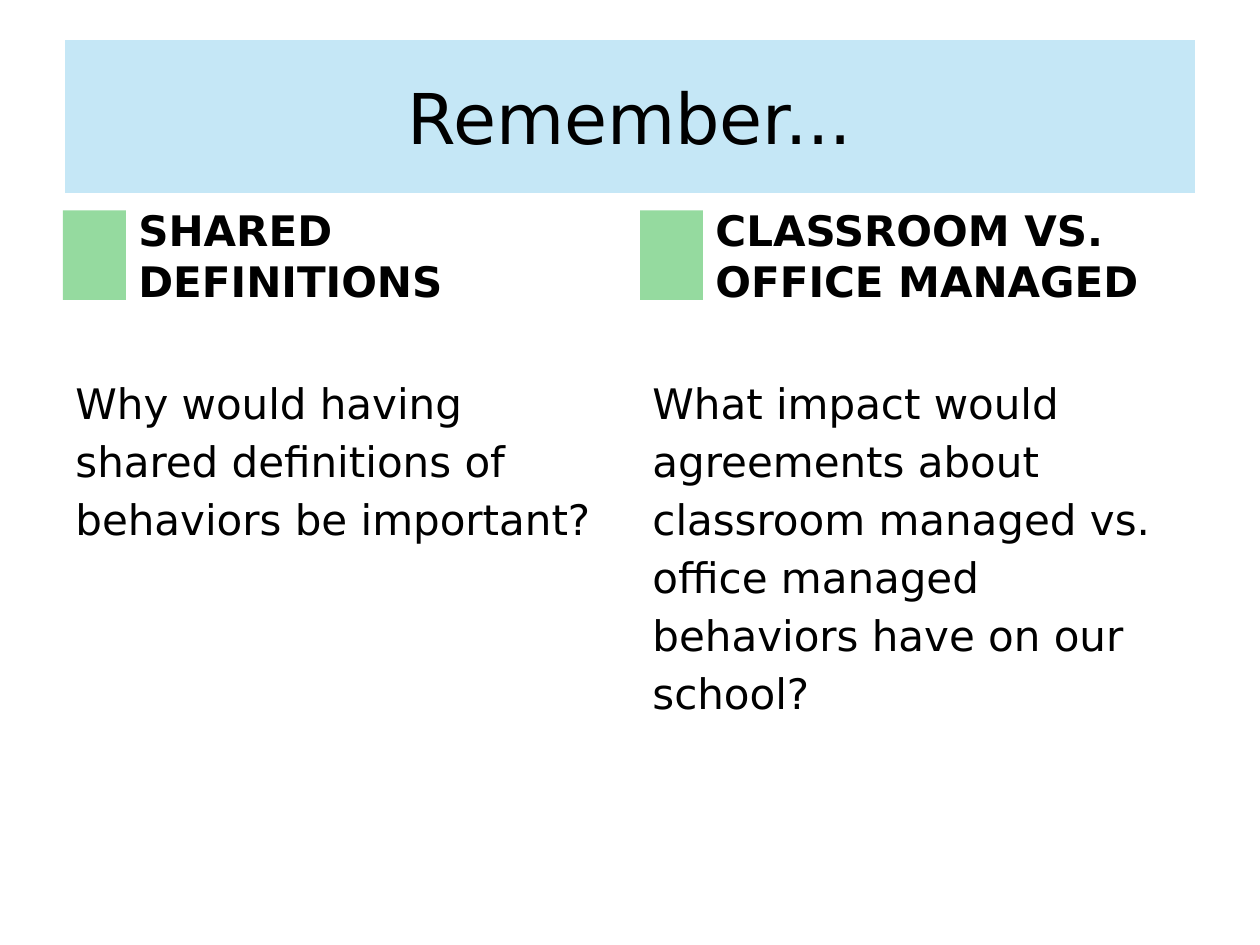
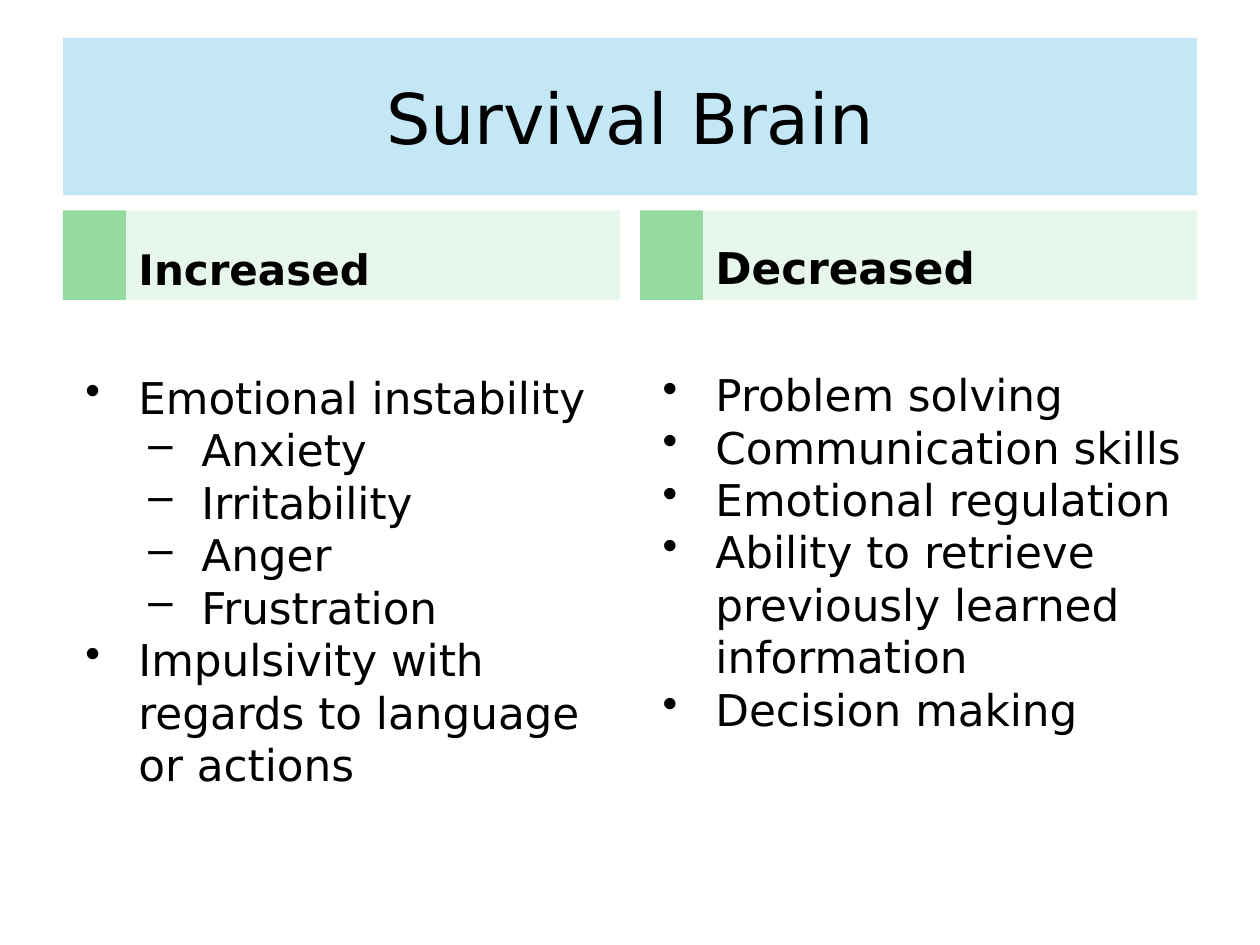
from collections import namedtuple

from lxml import etree
from pptx import Presentation
from pptx.dml.color import RGBColor
from pptx.enum.shapes import MSO_SHAPE
from pptx.enum.text import MSO_ANCHOR, MSO_AUTO_SIZE, PP_ALIGN
from pptx.oxml.ns import qn
from pptx.util import Inches, Pt

RECTANGLE = MSO_SHAPE.RECTANGLE
TOP, MIDDLE, BOTTOM = MSO_ANCHOR.TOP, MSO_ANCHOR.MIDDLE, MSO_ANCHOR.BOTTOM
LEFT, CENTER = PP_ALIGN.LEFT, PP_ALIGN.CENTER

BLACK = RGBColor(0x00, 0x00, 0x00)
WHITE = RGBColor(0xFF, 0xFF, 0xFF)
SKY = RGBColor(0xA9, 0xDC, 0xF2)
GREEN = RGBColor(0x95, 0xDA, 0x9F)
PALE_GREEN = RGBColor(0xE8, 0xF7, 0xEB)
FONT = "DejaVu Sans"

# The slide is a grid of 20 by 15 square units
SLIDE_WIDTH, SLIDE_HEIGHT = Inches(10), Inches(7.5)
UNIT = SLIDE_WIDTH / 20

Box = namedtuple("Box", "left top width height")
Column = namedtuple("Column", "heading heading_size body_drop items")

TITLE_BOX = Box(1, 0.6, 18, 2.5)
COLUMN_BOX = Box(1, 3.34, 8.84, 10.06)
COLUMN_STEP = 9.16
MARKER_WIDTH, HEADING_HEIGHT = 1, 1.42
BULLETS = ["•", "–"]


def place(box):
    return [round(length * UNIT) for length in box]


def set_paragraph(paragraph, text, size, bold=False, align=LEFT):
    paragraph.text = text
    paragraph.alignment = align
    font = paragraph.font
    font.name, font.size, font.bold = FONT, Pt(size), bold
    font.color.rgb = BLACK


def set_frame(frame, anchor, inset):
    frame.word_wrap = True
    frame.auto_size = MSO_AUTO_SIZE.NONE
    frame.vertical_anchor = anchor
    frame.margin_left = frame.margin_right = Inches(0.1)
    frame.margin_top = frame.margin_bottom = Inches(inset)


def add_bullet(paragraph, level):
    properties = paragraph._p.get_or_add_pPr()
    properties.set("marL", str(Inches(0.5 * (level + 1))))
    properties.set("indent", str(Inches(-0.42)))
    etree.SubElement(properties, qn("a:buChar")).set("char", BULLETS[level])


def add_rectangle(slide, box, color):
    shape = slide.shapes.add_shape(RECTANGLE, *place(box))
    shape.shadow.inherit = False
    shape.fill.solid()
    shape.fill.fore_color.rgb = color
    shape.line.fill.background()
    return shape


def add_title(slide, text, opacity, inset):
    title = slide.shapes.title
    title.left, title.top, title.width, title.height = place(TITLE_BOX)
    title.fill.solid()
    title.fill.fore_color.rgb = SKY
    color = title._element.spPr.find(".//" + qn("a:srgbClr"))
    etree.SubElement(color, qn("a:alpha")).set("val", str(opacity * 1000))
    set_frame(title.text_frame, MIDDLE, inset)
    set_paragraph(title.text_frame.paragraphs[0], text, 40, align=CENTER)
    return title


def add_heading(slide, box, column, color, anchor, inset):
    # Green marker, then the heading beside it
    add_rectangle(slide, box._replace(width=MARKER_WIDTH), GREEN)
    band = add_rectangle(
        slide,
        box._replace(left=box.left + MARKER_WIDTH, width=box.width - MARKER_WIDTH),
        color,
    )
    set_frame(band.text_frame, anchor, inset)
    set_paragraph(band.text_frame.paragraphs[0], column.heading,
                  column.heading_size, bold=True)


def add_body(slide, box, items, size, inset, bulleted):
    frame = slide.shapes.add_textbox(*place(box)).text_frame
    set_frame(frame, TOP, inset)
    for index, (level, text) in enumerate(items):
        paragraph = frame.add_paragraph() if index else frame.paragraphs[0]
        if bulleted:
            add_bullet(paragraph, level)
        else:
            paragraph.line_spacing = 1.15
        set_paragraph(paragraph, text, size)


def add_comparison(presentation, title, opacity, columns, heading_color,
                   anchor, inset, body_size, bulleted):
    slide = presentation.slides.add_slide(presentation.slide_layouts[5])
    title_shape = add_title(slide, title, opacity, inset)
    for index, column in enumerate(columns):
        box = COLUMN_BOX._replace(left=COLUMN_BOX.left + index * COLUMN_STEP)
        add_heading(slide, box._replace(height=HEADING_HEIGHT), column,
                    heading_color, anchor, inset)
        drop = HEADING_HEIGHT + column.body_drop
        body_box = box._replace(top=box.top + drop, height=box.height - drop)
        add_body(slide, body_box, column.items, body_size, inset, bulleted)
    return title_shape


def main():
    presentation = Presentation()
    presentation.slide_width, presentation.slide_height = SLIDE_WIDTH, SLIDE_HEIGHT

    # Discussion questions
    questions = [
        Column("SHARED DEFINITIONS", 24, 0.92, [
            (0, "Why would having shared definitions of behaviors be important?"),
        ]),
        Column("CLASSROOM VS. OFFICE MANAGED", 24, 0.92, [
            (0, "What impact would agreements about classroom managed vs. "
                "office managed behaviors have on our school?"),
        ]),
    ]
    title = add_comparison(presentation, "Remember...", 67, questions, WHITE,
                           MIDDLE, 0.1, 24, bulleted=False)
    title.line.color.rgb = WHITE
    title.line.width = Pt(2.25)

    # Effects of the survival brain
    effects = [
        Column("Increased", 24, 1.02, [
            (0, "Emotional instability"),
            (1, "Anxiety"),
            (1, "Irritability"),
            (1, "Anger"),
            (1, "Frustration"),
            (0, "Impulsivity with regards to language or actions"),
        ]),
        Column("Decreased", 25, 0.98, [
            (0, "Problem solving"),
            (0, "Communication skills"),
            (0, "Emotional regulation"),
            (0, "Ability to retrieve previously learned information"),
            (0, "Decision making"),
        ]),
    ]
    add_comparison(presentation, "Survival Brain", 68, effects, PALE_GREEN,
                   BOTTOM, 0.05, 25, bulleted=True)

    presentation.save("out.pptx")


if __name__ == "__main__":
    main()
